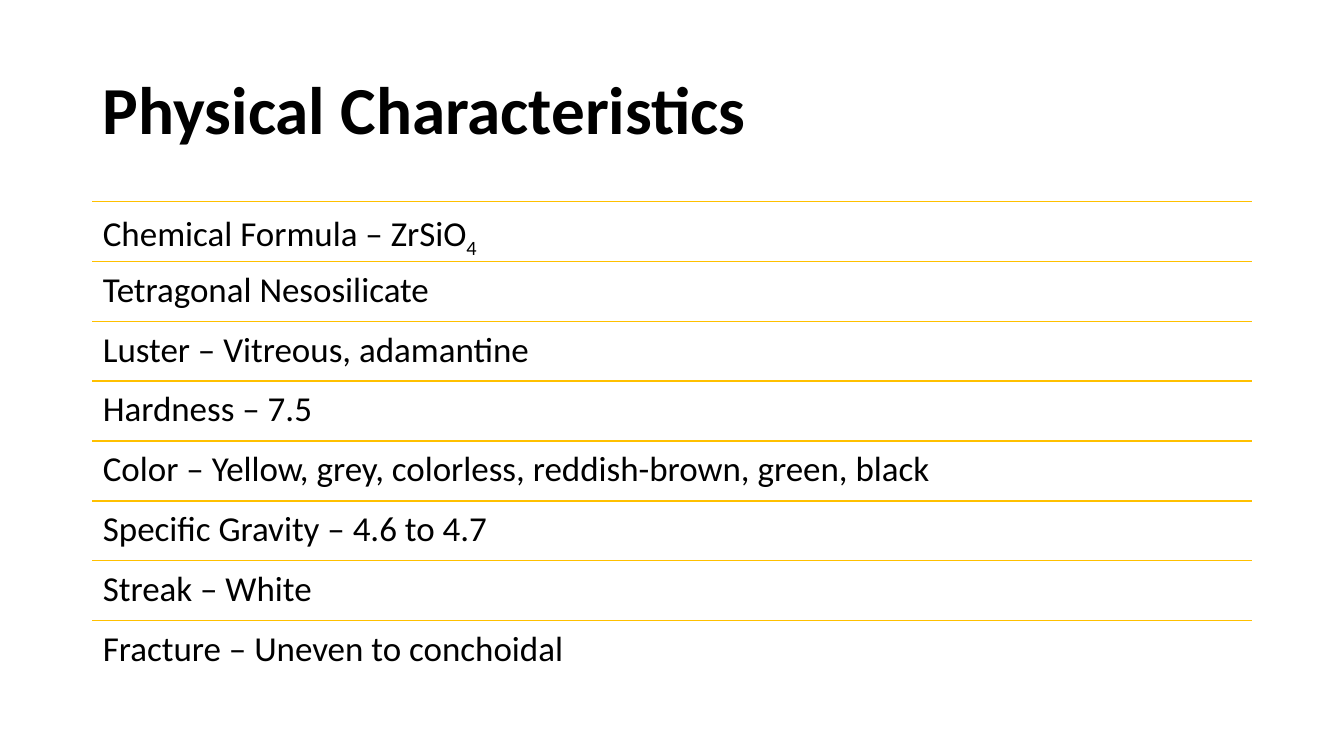
from pptx import Presentation
from pptx.dml.color import RGBColor
from pptx.enum.shapes import MSO_CONNECTOR
from pptx.enum.text import MSO_ANCHOR
from pptx.oxml.ns import qn
from pptx.util import Pt
from lxml.etree import SubElement

PX = 9525
LEFT, WIDTH = 88, 1104
TOP, PITCH = 192, 57
FACTS = [
    ("Chemical Formula – ZrSiO", "4"),
    ("Tetragonal Nesosilicate", ""),
    ("Luster – Vitreous, adamantine", ""),
    ("Hardness – 7.5", ""),
    ("Color – Yellow, grey, colorless, reddish-brown, green, black", ""),
    ("Specific Gravity – 4.6 to 4.7", ""),
    ("Streak – White", ""),
    ("Fracture – Uneven to conchoidal", ""),
]


def color(code):
    return RGBColor.from_string(code)


def add_text(shapes, text, top, height, size, pad, bold=False, sub=""):
    """Add a full-width text box; sub is set as a subscript after the text."""
    box = shapes.add_textbox(LEFT * PX, top * PX, WIDTH * PX, height * PX)
    frame = box.text_frame
    frame.word_wrap = True
    frame.margin_left = frame.margin_right = 10 * PX
    frame.margin_top = frame.margin_bottom = pad * PX
    frame.text = text
    para = frame.paragraphs[0]
    para.line_spacing = 0.9
    if sub:
        low = para.add_run()
        low.text = sub
        low.font._element.set("baseline", "-25000")
    for run in para.runs:
        font = run.font
        font.name = "Calibri"
        font.size = Pt(size)
        font.bold = bold
        font.color.rgb = color("000000")
    return frame


def add_rule(shapes, top):
    rule = shapes.add_connector(
        MSO_CONNECTOR.STRAIGHT, LEFT * PX, top * PX, (LEFT + WIDTH) * PX, top * PX)
    rule.line.color.rgb = color("FFC000")
    rule.line.width = Pt(1)
    SubElement(rule._element.spPr, qn("a:effectLst"))


def main():
    deck = Presentation()
    deck.slide_width, deck.slide_height = 1280 * PX, 720 * PX
    slide = deck.slides.add_slide(deck.slide_layouts[6])
    title = add_text(slide.shapes, "Physical Characteristics", 38, 139, 48, 5, bold=True)
    title.vertical_anchor = MSO_ANCHOR.MIDDLE
    rows = slide.shapes.add_group_shape().shapes
    for index, (fact, sub) in enumerate(FACTS):
        top = TOP + index * PITCH
        add_rule(rows, top)
        frame = add_text(rows, fact, top, PITCH, 25, 10, sub=sub)
        frame.paragraphs[0].space_after = Pt(9)
    deck.save("out.pptx")


if __name__ == "__main__":
    main()
